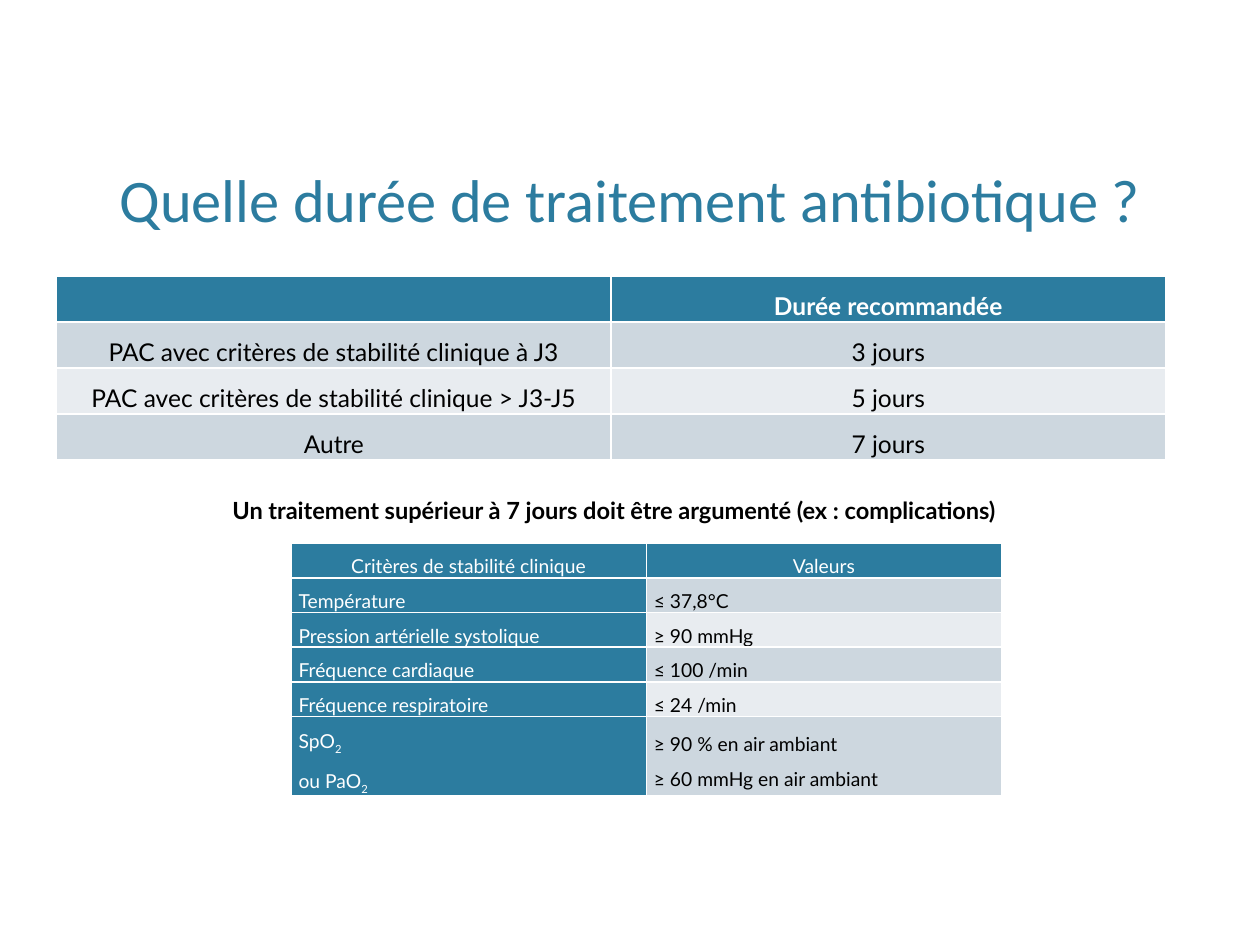
from lxml import etree
from pptx import Presentation
from pptx.dml.color import RGBColor
from pptx.enum import text
from pptx.oxml.ns import qn
from pptx.util import Inches, Pt

TITLE = "Quelle durée de traitement antibiotique ?"
WARNING = "Un traitement supérieur à 7 jours doit être argumenté (ex : complications)"
DURATIONS = [
    ("", "Durée recommandée"),
    ("PAC avec critères de stabilité clinique à J3", "3 jours"),
    ("PAC avec critères de stabilité clinique > J3-J5", "5 jours"),
    ("Autre", "7 jours"),
]
CRITERIA = [
    ("Critères de stabilité clinique", "Valeurs"),
    ("Température", "≤ 37,8°C"),
    ("Pression artérielle systolique", "≥ 90 mmHg"),
    ("Fréquence cardiaque", "≤ 100 /min"),
    ("Fréquence respiratoire", "≤ 24 /min"),
    ("SpO_2\nou PaO_2", "≥ 90 % en air ambiant\n≥ 60 mmHg en air ambiant"),
]
TEAL, WHITE, BLACK = "2C7C9F", "FFFFFF", "000000"
BANDS = ["CDD7DF", "E8ECF0"]
CENTER, JUSTIFY = text.PP_ALIGN.CENTER, text.PP_ALIGN.JUSTIFY


def rgb(value):
    return RGBColor.from_string(value)


def style(paragraph, size, color, bold=False, align=CENTER, font="Lato"):
    paragraph.alignment = align
    paragraph.font.name = font
    paragraph.font.size = Pt(size)
    paragraph.font.bold = bold
    paragraph.font.color.rgb = rgb(color)


def add_line(slide, box, content, anchor, **look):
    frame = slide.shapes.add_textbox(*map(Inches, box)).text_frame
    frame.word_wrap = True
    frame.vertical_anchor = anchor
    frame.text = content
    style(frame.paragraphs[0], **look)


def add_borders(cell):
    props = cell._tc.get_or_add_tcPr()
    for side in ("lnL", "lnR", "lnT", "lnB"):
        line = etree.SubElement(props, qn(f"a:{side}"), w=str(Pt(1)))
        fill = etree.SubElement(line, qn("a:solidFill"))
        etree.SubElement(fill, qn("a:srgbClr"), val=WHITE)


def fill_cell(cell, content, fill, side_margin, **look):
    add_borders(cell)
    cell.fill.solid()
    cell.fill.fore_color.rgb = rgb(fill)
    cell.vertical_anchor = text.MSO_ANCHOR.MIDDLE
    cell.margin_left = cell.margin_right = Inches(side_margin)
    cell.margin_top = cell.margin_bottom = 0
    for i, line in enumerate(content.split("\n")):
        frame = cell.text_frame
        paragraph = frame.add_paragraph() if i else frame.paragraphs[0]
        paragraph.line_spacing = 1.5
        style(paragraph, **look)
        base, _, subscript = line.partition("_")
        if base:
            paragraph.add_run().text = base
        if subscript:
            run = paragraph.add_run()
            run.text = subscript
            run._r.get_or_add_rPr().set("baseline", "-25000")


def add_grid(slide, rows, left, top, width, row_heights, size, side_margin,
             bold_header, teal_labels, body_align):
    table = slide.shapes.add_table(
        len(rows), 2, Inches(left), Inches(top), Inches(width),
        Inches(sum(row_heights))).table
    for column in table.columns:
        column.width = Inches(width / 2)
    for r, (row, height) in enumerate(zip(rows, row_heights)):
        table.rows[r].height = Inches(height)
        for c, content in enumerate(row):
            header = r == 0
            teal = header or (teal_labels and c == 0)
            fill_cell(table.cell(r, c), content,
                      TEAL if teal else BANDS[(r - 1) % 2], side_margin,
                      size=size, color=WHITE if teal else BLACK,
                      bold=header and bold_header,
                      align=CENTER if header else body_align)


def main():
    deck = Presentation()
    deck.slide_width, deck.slide_height = Inches(10), Inches(7.5)
    slide = deck.slides.add_slide(deck.slide_layouts[6])
    add_line(slide, (0.6, 1.03, 8.8, 0.88), TITLE, text.MSO_ANCHOR.BOTTOM,
             size=34.5, color=TEAL, font="Calibri")
    add_grid(slide, DURATIONS, 0.45, 2.19, 8.8, [0.365] * 4, 14, 0,
             bold_header=True, teal_labels=False, body_align=CENTER)
    add_grid(slide, CRITERIA, 2.31, 4.31, 5.64, [0.26] * 5 + [0.53], 11, 0.06,
             bold_header=False, teal_labels=True, body_align=JUSTIFY)
    add_line(slide, (0.51, 3.89, 8.73, 0.33), WARNING, text.MSO_ANCHOR.TOP,
             size=13.5, color=BLACK, bold=True)
    deck.save("out.pptx")


if __name__ == "__main__":
    main()
